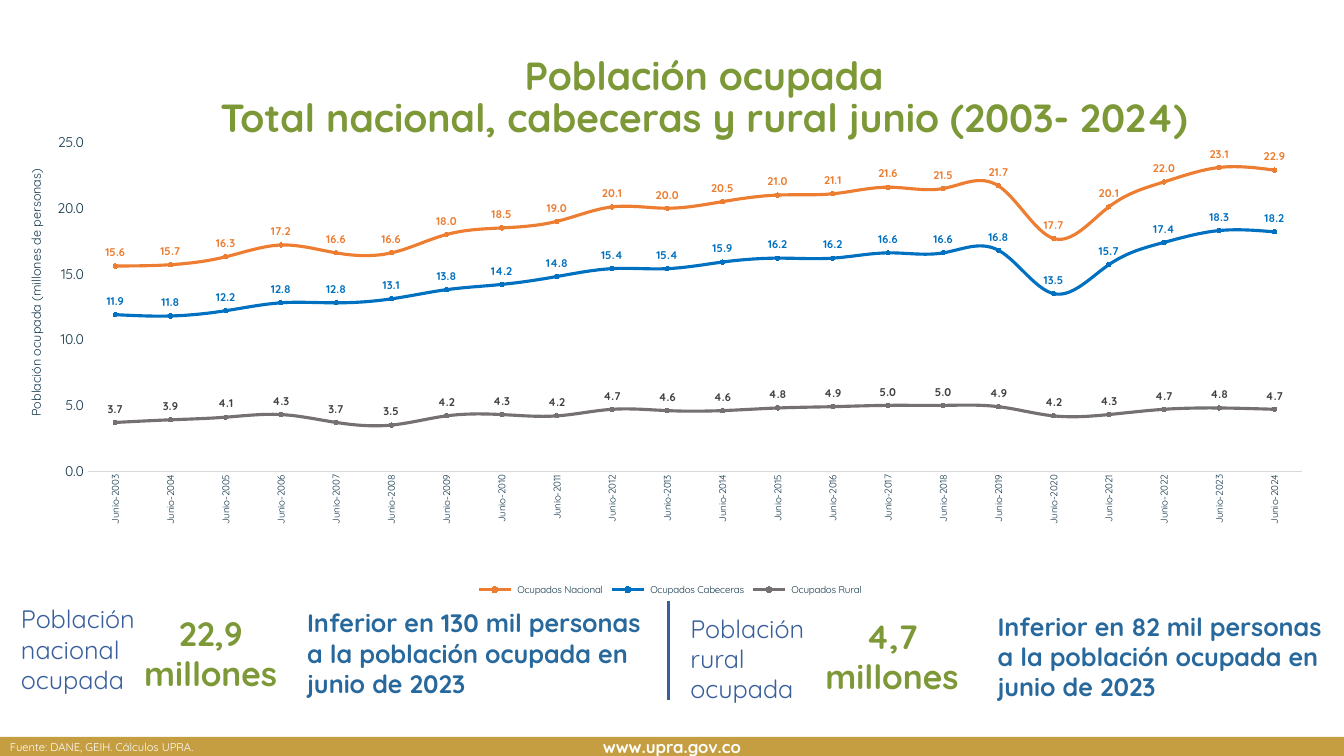
from lxml import etree
from pptx import Presentation
from pptx import util as u
from pptx.chart.data import CategoryChartData
from pptx.dml.color import RGBColor
from pptx.enum import chart as ch, shapes, text
from pptx.oxml import parse_xml
from pptx.oxml.ns import nsdecls, qn

Cm, Pt = u.Cm, u.Pt
FONT = "Quicksand"
GREEN, BLUE, INDIGO, NAVY, WHITE = "7D9837", "27689D", "395F9B", "12364A", "FFFFFF"
CENTER = text.PP_ALIGN.CENTER

SERIES = [
    (" Ocupados Nacional ", "ED7D31", "ED7D31",
     [15.6, 15.7, 16.3, 17.2, 16.6, 16.6, 18, 18.5, 19, 20.1, 20,
      20.5, 21, 21.1, 21.6, 21.5, 21.7, 17.7, 20.1, 22, 23.1, 22.9]),
    (" Ocupados Cabeceras ", "0070C0", "0070C0",
     [11.9, 11.8, 12.2, 12.8, 12.8, 13.1, 13.8, 14.2, 14.8, 15.4, 15.4,
      15.9, 16.2, 16.2, 16.6, 16.6, 16.8, 13.5, 15.7, 17.4, 18.3, 18.2]),
    (" Ocupados Rural ", "767171", "404040",
     [3.7, 3.9, 4.1, 4.3, 3.7, 3.5, 4.2, 4.3, 4.2, 4.7, 4.6,
      4.6, 4.8, 4.9, 5, 5, 4.9, 4.2, 4.3, 4.7, 4.8, 4.7]),
]


def rgb(value):
    return RGBColor.from_string(value)


def style(font, size, color, bold=False):
    font.name, font.size, font.bold = FONT, Pt(size), bold
    font.color.rgb = rgb(color)


def write(tf, content, size=18, color=WHITE, bold=False, align=None, spacing=None):
    tf.word_wrap = True
    for i, line in enumerate(content.split("\n")):
        p = tf.add_paragraph() if i else tf.paragraphs[0]
        p.alignment, p.line_spacing = align, spacing
        r = p.add_run()
        r.text = line
        style(r.font, size, color, bold)


def add_text(s, box, content, **fmt):
    sp = s.shapes.add_textbox(*map(Cm, box))
    write(sp.text_frame, content, **fmt)


def layout(x, y, w=None, h=None):
    tags = [("xMode", "edge"), ("yMode", "edge"), ("x", x), ("y", y), ("w", w), ("h", h)]
    if w is not None:
        tags.insert(0, ("layoutTarget", "inner"))
    body = "".join(f'<c:{t} val="{v}"/>' for t, v in tags if v is not None)
    return parse_xml(f'<c:layout {nsdecls("c")}><c:manualLayout>{body}</c:manualLayout></c:layout>')


def replace_layout(parent, new, position):
    for old in parent.findall(qn("c:layout")):
        parent.remove(old)
    parent.insert(position, new)


def add_footer(s, x, y, w, h):
    sp = s.shapes.add_shape(shapes.MSO_SHAPE.RECTANGLE, Cm(x), Cm(y), Cm(w), Cm(h))
    sp.shadow.inherit = False
    sp.fill.solid()
    sp.fill.fore_color.rgb = rgb("C59E41")
    sp.line.fill.background()
    sp.text_frame.vertical_anchor = text.MSO_ANCHOR.MIDDLE
    write(sp.text_frame, "www.upra.gov.co", size=12, bold=True, align=CENTER)
    add_text(s, (x, y - 0.05, 11.56, 0.61), "Fuente: DANE, GEIH. Cálculos UPRA.",
             size=8, align=text.PP_ALIGN.JUSTIFY)


def style_axes(chart):
    cat, val = chart.category_axis, chart.value_axis
    for axis, size in ((cat, 7), (val, 10)):
        axis.major_tick_mark = axis.minor_tick_mark = ch.XL_TICK_MARK.NONE
        axis.has_major_gridlines = False
        style(axis.tick_labels.font, size, NAVY)
    cat.format.line.color.rgb = rgb("D9D9D9")
    cat.format.line.width = Pt(0.75)
    cat._element.find(qn("c:txPr")).find(qn("a:bodyPr")).set("rot", "-5400000")
    val.format.line.fill.background()
    val.minimum_scale, val.maximum_scale, val.major_unit = 0, 25, 5
    val.tick_labels.number_format = "0.0"
    val.tick_labels.number_format_is_linked = False
    title = val.axis_title
    write(title.text_frame, "Población ocupada (millones de personas)", size=9, color=NAVY)
    body = title.text_frame._txBody.find(qn("a:bodyPr"))
    body.set("rot", "-5400000")
    body.set("vert", "horz")
    replace_layout(title._element, layout(0.01, 0.07), 1)


def add_line_chart(s, x, y, w, h):
    data = CategoryChartData(number_format="0.0")
    data.categories = [f"Junio-{year}" for year in range(2003, 2025)]
    for name, _, _, values in SERIES:
        data.add_series(name, values)
    chart = s.shapes.add_chart(ch.XL_CHART_TYPE.LINE_MARKERS, Cm(x), Cm(y), Cm(w), Cm(h), data).chart
    style(chart.font, 8, NAVY)
    chart.has_title = False
    chart.has_legend = True
    chart.legend.position = ch.XL_LEGEND_POSITION.BOTTOM
    chart.legend.include_in_layout = False
    style(chart.legend.font, 7, NAVY)
    chart.plots[0].vary_by_categories = False
    for line, (_, color, label_color, _) in zip(chart.plots[0].series, SERIES):
        line.smooth = True
        line.format.line.color.rgb = rgb(color)
        line.format.line.width = Pt(2.25)
        line.marker.style, line.marker.size = ch.XL_MARKER_STYLE.CIRCLE, 3
        line.marker.format.fill.solid()
        line.marker.format.fill.fore_color.rgb = rgb(color)
        line.marker.format.line.color.rgb = rgb(color)
        labels = line.data_labels
        labels.show_value = True
        labels.position = ch.XL_LABEL_POSITION.ABOVE
        labels.number_format, labels.number_format_is_linked = "0.0", False
        style(labels.font, 8, label_color, True)
    style_axes(chart)
    root = chart._chartSpace
    replace_layout(root.chart.plotArea, layout(0.058, 0.018, 0.919, 0.706), 0)
    root.chart.addnext(parse_xml(
        f'<c:spPr {nsdecls("c", "a")}><a:noFill/><a:ln><a:noFill/></a:ln></c:spPr>'))


def add_indicator(s, x, y, label, value, value_at, note, note_at, note_w):
    add_text(s, (x, y, 4.09, 2.57), label, color=INDIGO)
    add_text(s, (x + value_at[0], y + value_at[1], 4.32, 2.31), value,
             size=24, color=GREEN, bold=True, align=CENTER)
    add_text(s, (x + note_at[0], y + note_at[1], note_w, 2.57), note, color=BLUE, bold=True)


def add_divider(s, x, top, bottom):
    line = s.shapes.add_connector(shapes.MSO_CONNECTOR.STRAIGHT, Cm(x), Cm(top), Cm(x), Cm(bottom))
    line.line.color.rgb = rgb(INDIGO)
    line.line.width = Pt(2.25)
    etree.SubElement(line._element.spPr, qn("a:effectLst"))


def main():
    prs = Presentation()
    prs.slide_width, prs.slide_height = Cm(33.87), Cm(19.05)
    s = prs.slides.add_slide(prs.slide_layouts[6])
    add_footer(s, 0, 18.57, 33.87, 0.48)
    add_text(s, (5.16, 1.3, 25.17, 3.02),
             "Población ocupada\nTotal nacional, cabeceras y rural junio (2003- 2024)",
             size=28, color=GREEN, bold=True, align=CENTER, spacing=0.9)
    add_indicator(s, 0.28, 15.09, "Población nacional\nocupada",
                  "22,9 millones", (2.87, 0.23),
                  "Inferior en 130 mil personas a la población ocupada en junio de 2023",
                  (7.21, 0.1), 9.3)
    add_indicator(s, 17.15, 15.32, "Población rural\nocupada",
                  "4,7 millones", (3.17, 0.07),
                  "Inferior en 82 mil personas a la población ocupada en junio de 2023",
                  (7.74, -0.05), 8.92)
    add_divider(s, 16.84, 15.14, 17.63)
    add_line_chart(s, 0.28, 3.38, 33.3, 11.73)
    prs.save("out.pptx")


if __name__ == "__main__":
    main()
